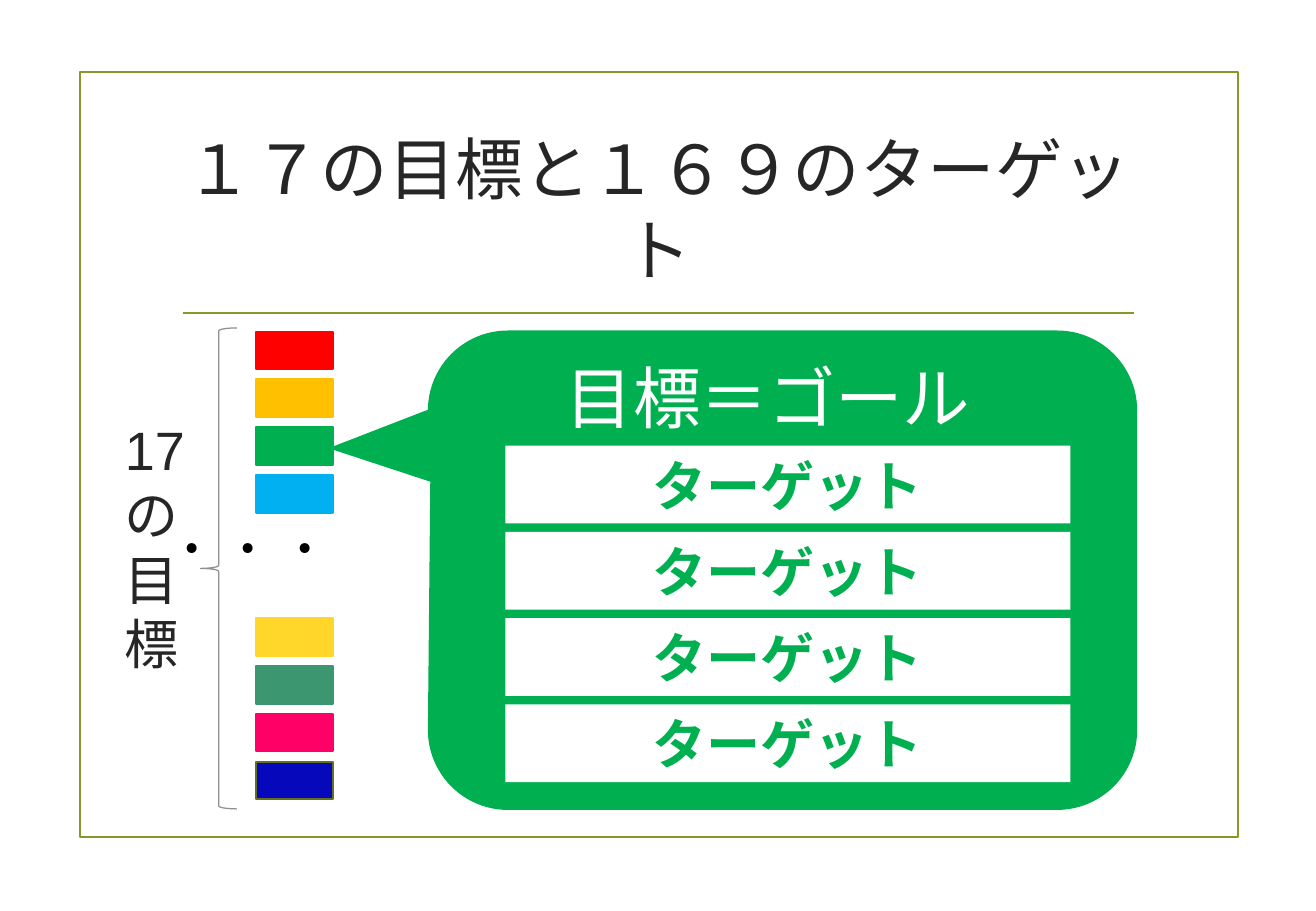
"""Build the slide on the 17 goals and their 169 targets."""
import math
from dataclasses import dataclass

import pptx
import pptx.dml.color
import pptx.enum.shapes
import pptx.enum.text
import pptx.oxml.ns
import pptx.util
from lxml import etree

Inches = pptx.util.Inches
SHAPE = pptx.enum.shapes.MSO_SHAPE
ANCHOR = pptx.enum.text.MSO_ANCHOR
ALIGN = pptx.enum.text.PP_ALIGN
GROW = pptx.enum.text.MSO_AUTO_SIZE.SHAPE_TO_FIT_TEXT
SERIF, SANS = "Times New Roman", "Arial"
OLIVE, GREEN, WHITE, DARK = "83992A", "00B050", "FFFFFF", "262626"


@dataclass(frozen=True)
class Box:
    x: float
    y: float
    w: float
    h: float


@dataclass(frozen=True)
class Style:
    size: float
    font: str
    color: str
    bold: bool = False
    align: ALIGN = ALIGN.LEFT


@dataclass(frozen=True)
class Swatch:
    row: int
    fill: str
    line: str


SWATCHES = [Swatch(row, c, c) for row, c in (
    (0, "FF0000"), (1, "FFC000"), (2, GREEN), (3, "00B0F0"),
    (6, "FFD629"), (7, "3C9770"), (8, "FF0066"))]
SWATCHES.append(Swatch(9, "0509BB", "61711F"))
SWATCH_PITCH = 3.54 / 9
TARGET_COUNT, TARGET_PITCH = 4, 0.71


def rgb(value: str) -> pptx.dml.color.RGBColor:
    return pptx.dml.color.RGBColor.from_string(value)


def paint(sp, fill: str = "", line: str = "", width: float = 1.25) -> None:
    sp.shadow.inherit = False
    if fill:
        sp.fill.solid()
        sp.fill.fore_color.rgb = rgb(fill)
    else:
        sp.fill.background()
    if line:
        sp.line.color.rgb = rgb(line)
        sp.line.width = pptx.util.Pt(width)
    else:
        sp.line.fill.background()


def add_box(s, shape: SHAPE, box: Box, fill: str = "", line: str = "", width: float = 1.25):
    sp = s.shapes.add_shape(shape, Inches(box.x), Inches(box.y), Inches(box.w), Inches(box.h))
    paint(sp, fill, line, width)
    return sp


def write(tf, lines: list[str], style: Style, anchor: ANCHOR = ANCHOR.TOP) -> None:
    tf.word_wrap = True
    tf.vertical_anchor = anchor
    for i, text in enumerate(lines):
        p = tf.add_paragraph() if i else tf.paragraphs[0]
        p.alignment = style.align
        r = p.add_run()
        r.text = text
        r.font.size = pptx.util.Pt(style.size)
        r.font.name = style.font
        r.font.bold = style.bold
        r.font.color.rgb = rgb(style.color)


def add_text(s, box: Box, lines: list[str], style: Style, anchor: ANCHOR = ANCHOR.TOP):
    sp = s.shapes.add_textbox(Inches(box.x), Inches(box.y), Inches(box.w), Inches(box.h))
    write(sp.text_frame, lines, style, anchor)
    return sp


def add_divider(s, x1: float, x2: float, y: float) -> None:
    cn = s.shapes.add_connector(pptx.enum.shapes.MSO_CONNECTOR.STRAIGHT,
                                Inches(x1), Inches(y), Inches(x2), Inches(y))
    cn.line.color.rgb = rgb(OLIVE)
    cn.line.width = pptx.util.Pt(1.25)
    etree.SubElement(cn.element.spPr, pptx.oxml.ns.qn("a:effectLst"))


def callout_points() -> list[tuple[int, int]]:
    left, top, right, bottom, radius, steps = 3.53, 2.73, 9.35, 6.66, 0.65, 24
    corners = [(left + radius, top + radius, 180), (right - radius, top + radius, 270),
               (right - radius, bottom - radius, 0), (left + radius, bottom - radius, 90)]
    points = []
    for cx, cy, start in corners:
        for i in range(steps + 1):
            a = math.radians(start + 90 * i / steps)
            points.append((cx + radius * math.cos(a), cy + radius * math.sin(a)))
    points += [(3.55, 3.96), (2.73, 3.69)]
    return [(Inches(x), Inches(y)) for x, y in points]


def add_callout(s) -> None:
    points = callout_points()
    fb = s.shapes.build_freeform(*points[0])
    fb.add_line_segments(points[1:], close=True)
    sp = fb.convert_to_shape()
    paint(sp, GREEN, GREEN)
    tf = sp.text_frame
    tf.margin_left, tf.margin_top = Inches(0.66), Inches(0.2)
    write(tf, ["目標＝ゴール"], Style(40, SERIF, WHITE, align=ALIGN.CENTER))


def main() -> None:
    prs = pptx.Presentation()
    prs.slide_width, prs.slide_height = Inches(10.83), Inches(7.5)
    s = prs.slides.add_slide(prs.slide_layouts[6])

    add_box(s, SHAPE.RECTANGLE, Box(0.66, 0.59, 9.53, 6.3), line=OLIVE)
    add_divider(s, 1.51, 9.33, 2.58)
    add_text(s, Box(1.39, 1, 8.05, 1.43), ["１７の目標と１６９のターゲット"],
             Style(40, SERIF, DARK, align=ALIGN.CENTER), ANCHOR.MIDDLE)

    for swatch in SWATCHES:
        box = Box(2.11, 2.73 + swatch.row * SWATCH_PITCH, 0.63, 0.31)
        add_box(s, SHAPE.RECTANGLE, box, swatch.fill, swatch.line)
    add_box(s, SHAPE.LEFT_BRACE, Box(1.65, 2.7, 0.3, 3.96), line="909090", width=0.75)

    label = add_text(s, Box(0.93, 3.38, 1.02, 2.26), ["17", "の", "目標"], Style(32, SANS, DARK))
    label.text_frame.auto_size = GROW
    dots = add_text(s, Box(2.11, 4.22, 0.67, 0.79), ["・・・"], Style(28, SERIF, "000000"))
    dots.text_frame.auto_size = GROW
    dots.element.txBody.find(pptx.oxml.ns.qn("a:bodyPr")).set("vert", "eaVert")

    add_callout(s)
    for i in range(TARGET_COUNT):
        sp = add_box(s, SHAPE.RECTANGLE, Box(4.16, 3.67 + i * TARGET_PITCH, 4.65, 0.64), WHITE)
        write(sp.text_frame, ["ターゲット"],
              Style(32, SANS, GREEN, True, ALIGN.CENTER), ANCHOR.MIDDLE)

    prs.save("out.pptx")


if __name__ == "__main__":
    main()
